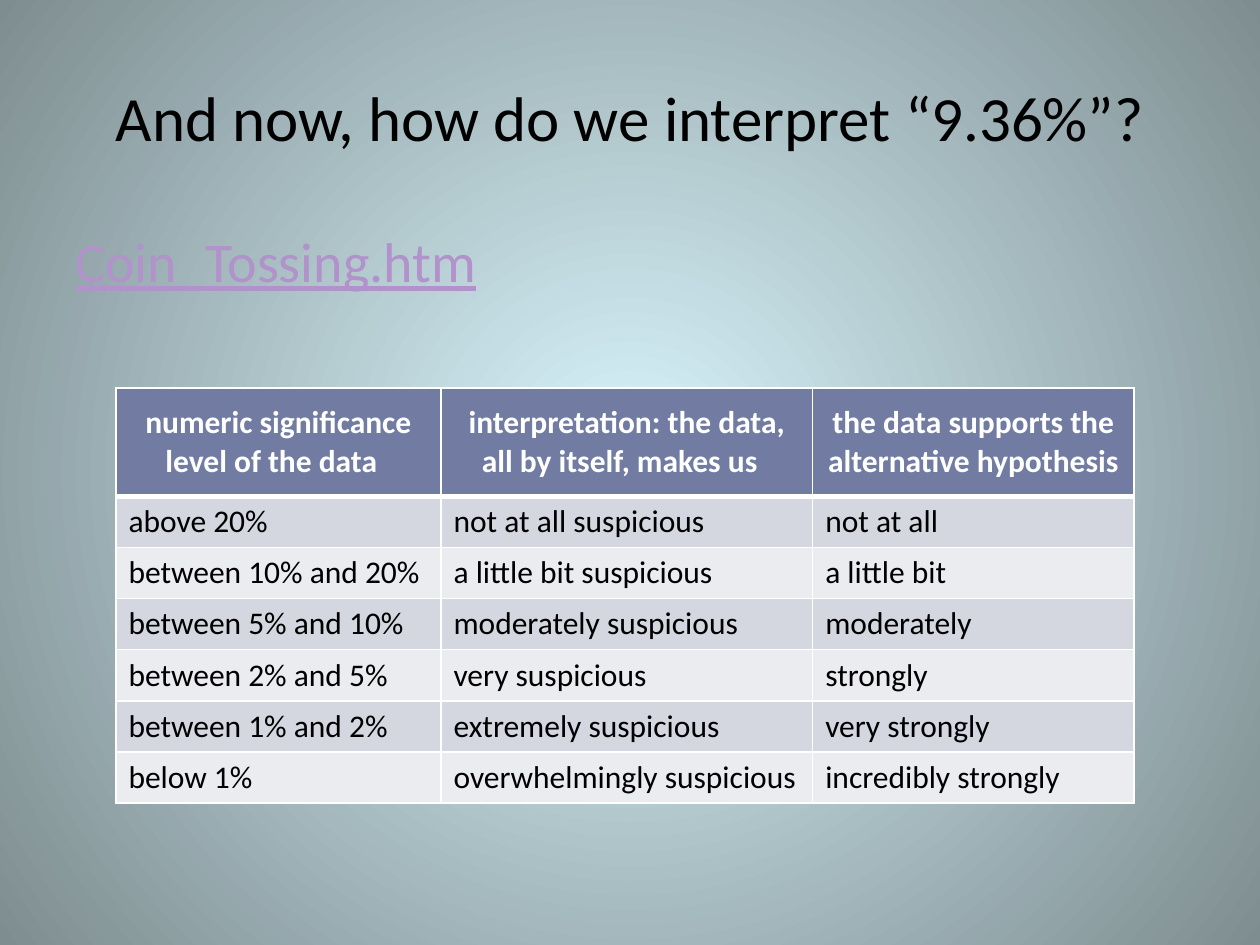
from lxml import etree
from pptx import Presentation
from pptx import util as u
from pptx.dml.color import RGBColor
from pptx.enum import text
from pptx.oxml import parse_xml
from pptx.oxml.ns import nsdecls, qn

# Content
TITLE = "And now, how do we interpret “9.36%”?"
BODY = "Coin_Tossing.htm"
HEADER = (
    "numeric significance level of the data  ",
    "interpretation: the data, all by itself, makes us  ",
    "the data supports the alternative hypothesis",
)
ROWS = [
    ("above 20%", "not at all suspicious", "not at all"),
    ("between 10% and 20%", "a little bit suspicious", "a little bit"),
    ("between 5% and 10%", "moderately suspicious", "moderately"),
    ("between 2% and 5%", "very suspicious", "strongly"),
    ("between 1% and 2%", "extremely suspicious", "very strongly"),
    ("below 1%", "overwhelmingly suspicious", "incredibly strongly"),
]

# Layout in inches and formats
WIDTH, HEIGHT = 10, 7.5
MARGIN = WIDTH / 20
TITLE_AREA = (MARGIN, HEIGHT * 0.04, WIDTH - 2 * MARGIN, 1.25)
BODY_AREA = (MARGIN, 1.75, WIDTH - 2 * MARGIN, HEIGHT * 0.66)
TABLE_LEFT, TABLE_TOP = 0.92, 3.08
COLUMN_WIDTHS = (2.58, 2.95, 2.55)
HEADER_HEIGHT, ROW_HEIGHT = 0.86, 0.405
HEADER_FILL, BAND_FILLS, BORDER = "727CA3", ("D5D7E0", "EBECF0"), "FFFFFF"
GLOW, EDGE = "D9F5FC", "7E8D90"

TITLE_FORMAT = {"size": u.Pt(36), "color": "000000"}
LINK_FORMAT = {"size": u.Pt(32), "color": "B292CA", "underline": True}
HEADER_FORMAT = {"size": u.Pt(18), "color": "FFFFFF", "bold": True}
CELL_FORMAT = {"size": u.Pt(18), "color": "000000", "bold": False}


def color(value):
    return RGBColor.from_string(value)


def write(frame, words, formats, align):
    para = frame.paragraphs[0]
    para.alignment = align
    span = para.add_run()
    span.text = words
    span.font.name = "Calibri"
    for name, value in formats.items():
        if name == "color":
            span.font.color.rgb = color(value)
        else:
            setattr(span.font, name, value)
    return para


def place(box, area):
    for name, value in zip(("left", "top", "width", "height"), area):
        setattr(box, name, u.Inches(value))


def paint_background(page):
    page.background.fill.solid()
    solid = page._element.find(".//" + qn("p:bgPr")).find(qn("a:solidFill"))
    gradient = parse_xml(
        f'<a:gradFill rotWithShape="1" {nsdecls("a")}><a:gsLst>'
        f'<a:gs pos="0"><a:srgbClr val="{GLOW}"/></a:gs>'
        f'<a:gs pos="100000"><a:srgbClr val="{EDGE}"/></a:gs></a:gsLst>'
        '<a:path path="circle"><a:fillToRect l="50000" t="50000" r="50000" b="50000"/></a:path>'
        "</a:gradFill>"
    )
    solid.getparent().replace(solid, gradient)


def set_borders(cell, widths):
    properties = cell._tc.get_or_add_tcPr()
    for index, (side, points) in enumerate(zip("LRTB", widths)):
        line = etree.Element(qn(f"a:ln{side}"), w=str(u.Pt(points)))
        fill = etree.SubElement(line, qn("a:solidFill"))
        etree.SubElement(fill, qn("a:srgbClr"), val=BORDER)
        properties.insert(index, line)


def add_levels_table(page):
    heights = [HEADER_HEIGHT] + [ROW_HEIGHT] * len(ROWS)
    area = (TABLE_LEFT, TABLE_TOP, sum(COLUMN_WIDTHS), sum(heights))
    table = page.shapes.add_table(
        len(heights), len(COLUMN_WIDTHS), *map(u.Inches, area)
    ).table
    for column, width in zip(table.columns, COLUMN_WIDTHS):
        column.width = u.Inches(width)
    for row, height in zip(table.rows, heights):
        row.height = u.Inches(height)

    for r, words in enumerate([HEADER, *ROWS]):
        is_header = r == 0
        formats = HEADER_FORMAT if is_header else CELL_FORMAT
        align = text.PP_ALIGN.CENTER if is_header else text.PP_ALIGN.LEFT
        top, bottom = (3 if r == 1 else 1), (3 if is_header else 1)
        for c, value in enumerate(words):
            cell = table.cell(r, c)
            cell.vertical_anchor = text.MSO_ANCHOR.MIDDLE
            cell.fill.solid()
            cell.fill.fore_color.rgb = color(
                HEADER_FILL if is_header else BAND_FILLS[(r - 1) % 2]
            )
            set_borders(cell, (1, 1, top, bottom))
            write(cell.text_frame, value, formats, align)


def main():
    deck = Presentation()
    deck.slide_width, deck.slide_height = u.Inches(WIDTH), u.Inches(HEIGHT)
    page = deck.slides.add_slide(deck.slide_layouts[1])
    paint_background(page)

    # Title and body
    title, body = page.shapes.title, page.placeholders[1]
    place(title, TITLE_AREA)
    title.text_frame.vertical_anchor = text.MSO_ANCHOR.MIDDLE
    write(title.text_frame, TITLE, TITLE_FORMAT, text.PP_ALIGN.CENTER)
    place(body, BODY_AREA)
    para = write(body.text_frame, BODY, LINK_FORMAT, text.PP_ALIGN.LEFT)
    properties = para._p.get_or_add_pPr()
    properties.set("marL", "0")
    properties.set("indent", "0")
    etree.SubElement(properties, qn("a:buNone"))

    # Table of significance levels
    add_levels_table(page)
    deck.save("out.pptx")


if __name__ == "__main__":
    main()
